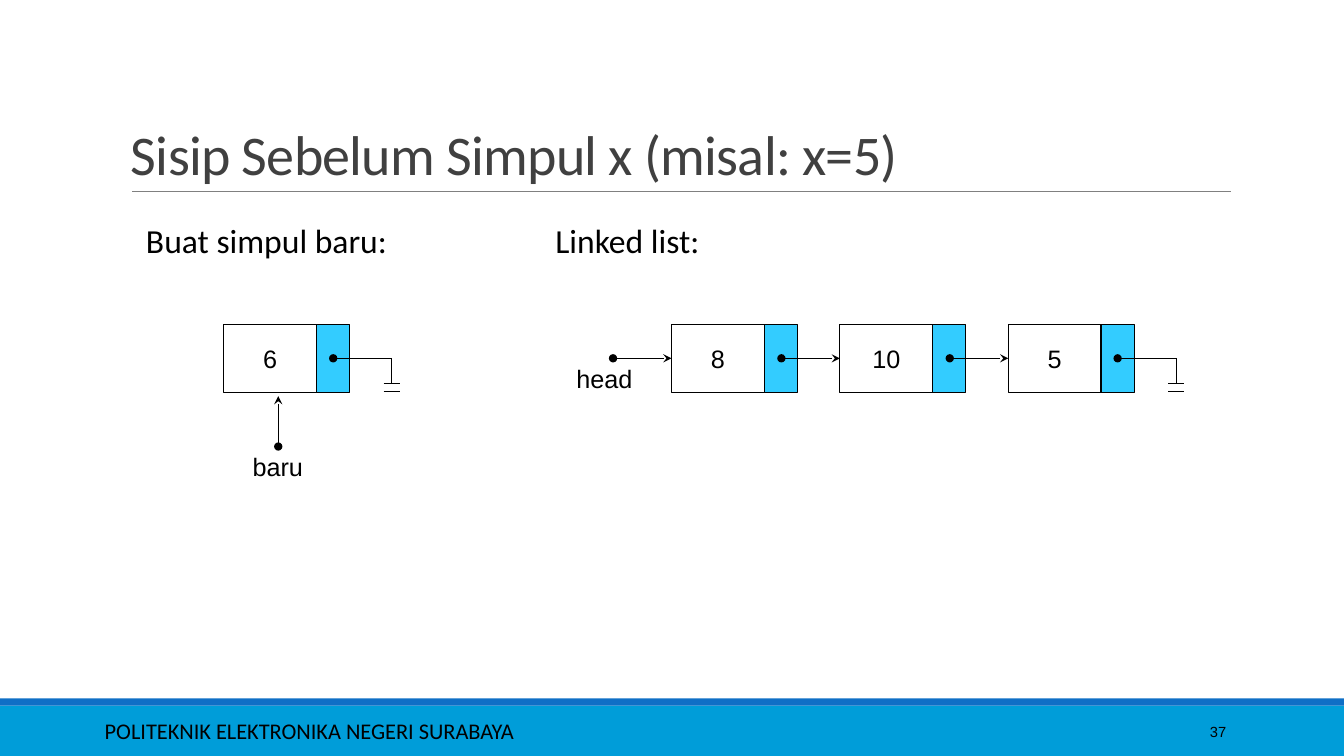
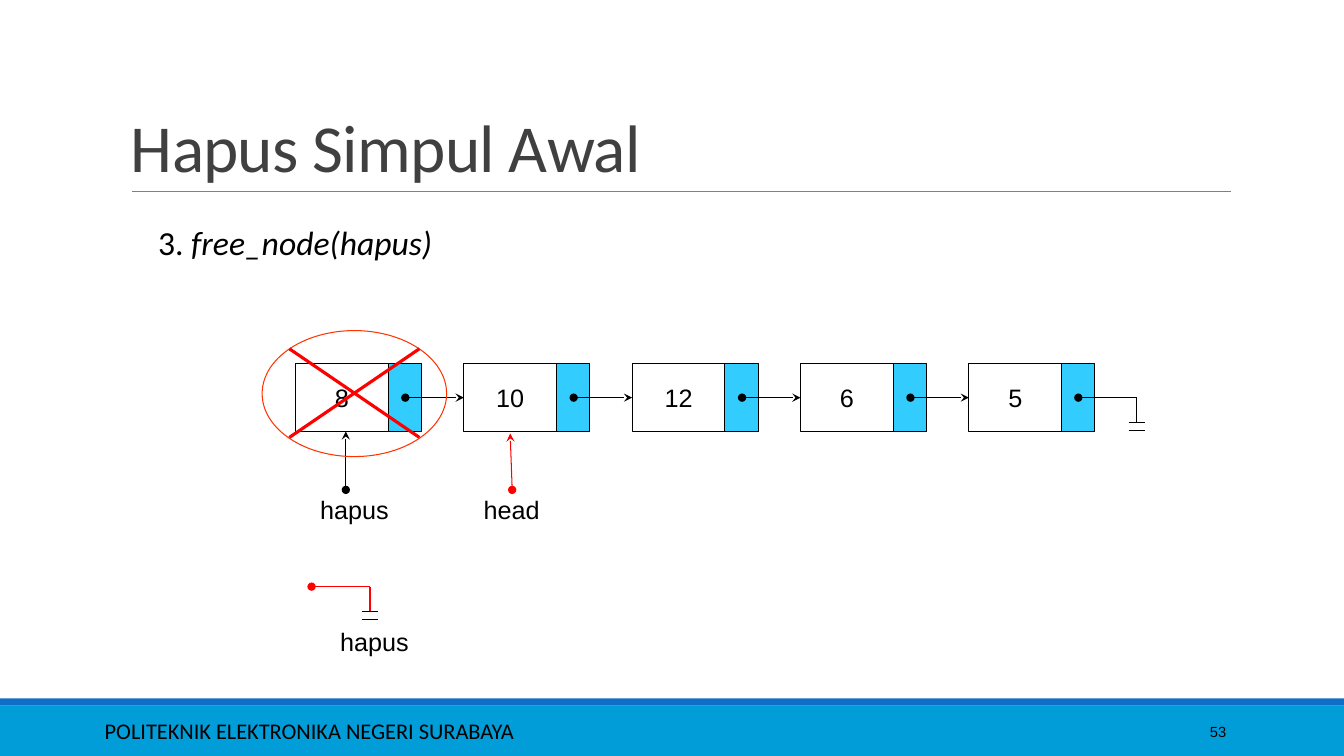
from pptx import Presentation
from pptx.dml.color import RGBColor as RGB
from pptx.enum.shapes import MSO_CONNECTOR as LINK, MSO_SHAPE as SHAPE
from pptx.enum.text import MSO_ANCHOR as ANCHOR, PP_ALIGN as ALIGN
from pptx.oxml.ns import qn
from pptx.util import Inches, Pt
from lxml import etree

HUE = {
    "band": "009DD9", "strip": "0F6FC6", "rule": "808080", "title": "404040",
    "ink": "000000", "cell": "33CCFF", "red": "FF0000", "ring": "FF3300",
}
WIDE, CELL, TALL, STEP = 0.92, 0.33, 0.67, 1.67

DECK = [
    {
        "title": "Sisip Sebelum Simpul x (misal: x=5)", "size": 40, "page": "37",
        "notes": [
            (1.35, 2.13, [("Buat simpul baru:", False)]),
            (5.41, 2.13, [("Linked list:", False)]),
        ],
        "lists": [(2.22, 3.22, ["6"]), (6.66, 3.22, ["8", "10", "5"])],
        "heads": [1],
        "tags": [("baru", 2.17, 4.43), ("head", 5.41, 3.56)],
        "arrows": [((2.76, 4.43), (2.76, 3.93), "ink")],
        "grounds": [],
        "rings": [],
    },
    {
        "title": "Hapus Simpul Awal", "size": 48, "page": "53",
        "notes": [(1.47, 2.15, [("3. ", False), ("free_node(hapus)", True)])],
        "lists": [(2.93, 3.61, ["8", "10", "12", "6", "5"])],
        "heads": [],
        "tags": [("hapus", 2.93, 4.86), ("head", 4.49, 4.86), ("hapus", 3.13, 6.16)],
        "arrows": [
            ((3.43, 4.86), (3.43, 4.28), "ink"),
            ((5.08, 4.86), (5.06, 4.3), "red"),
        ],
        "grounds": [(3.09, 5.82, "red")],
        "rings": [(2.6, 3.28, 1.83, 1.25)],
    },
]


def write(shape, runs, size, font="Arial", hue="ink", align=ALIGN.LEFT, anchor=ANCHOR.TOP):
    frame = shape.text_frame
    frame.word_wrap = True
    frame.vertical_anchor = anchor
    para = frame.paragraphs[0]
    para.alignment = align
    for words, slant in runs:
        run = para.add_run()
        run.text = words
        run.font.name = font
        run.font.size = Pt(size)
        run.font.italic = slant
        run.font.color.rgb = RGB.from_string(HUE[hue])
    return para


def draw(slide, start, end, hue="ink", width=0.75, head=None, tail=None):
    line = slide.shapes.add_connector(LINK.STRAIGHT, *map(Inches, start + end))
    line.line.color.rgb = RGB.from_string(HUE[hue])
    line.line.width = Pt(width)
    props = line._element.spPr
    for tag, kind in (("a:headEnd", head), ("a:tailEnd", tail)):
        if kind:
            etree.SubElement(props.find(qn("a:ln")), qn(tag), type=kind)
    etree.SubElement(props, qn("a:effectLst"))
    return line


prs = Presentation()
prs.slide_width = Inches(13.33)
prs.slide_height = Inches(7.5)

for data in DECK:
    slide = prs.slides.add_slide(prs.slide_layouts[6])
    shapes = slide.shapes

    for top, high, hue in ((7, 0.5, "band"), (6.93, 0.07, "strip")):
        bar = shapes.add_shape(SHAPE.RECTANGLE, 0, Inches(top), prs.slide_width, Inches(high))
        bar.shadow.inherit = False
        bar.fill.solid()
        bar.fill.fore_color.rgb = RGB.from_string(HUE[hue])
        bar.line.fill.background()
    draw(slide, (1.31, 1.9), (12.21, 1.9), "rule", 0.5)
    foot = shapes.add_textbox(Inches(0.94), Inches(7.05), Inches(8.41), Inches(0.4))
    write(foot, [("POLITEKNIK ELEKTRONIKA NEGERI SURABAYA", False)], 16, "Calibri", anchor=ANCHOR.MIDDLE)
    page = shapes.add_textbox(Inches(10.83), Inches(7.06), Inches(1.43), Inches(0.4))
    write(page, [(data["page"], False)], 10.5, align=ALIGN.RIGHT, anchor=ANCHOR.MIDDLE)
    title = shapes.add_textbox(Inches(1.2), Inches(0.31), Inches(11), Inches(1.59))
    para = write(title, [(data["title"], False)], data["size"], "Calibri", "title", anchor=ANCHOR.BOTTOM)
    para.line_spacing = 0.85
    para.runs[0].font._element.set("spc", "-50")

    for left, top, runs in data["notes"]:
        note = shapes.add_textbox(Inches(left), Inches(top), Inches(4), Inches(0.5))
        write(note, runs, 24, "Calibri")

    grounds = list(data["grounds"])
    for spot, (left, top, values) in enumerate(data["lists"]):
        mid = top + TALL / 2
        nodes = []
        for i, value in enumerate(values):
            x = left + i * STEP
            for at, wide in ((x, WIDE), (x + WIDE, CELL)):
                box = shapes.add_shape(SHAPE.RECTANGLE, Inches(at), Inches(top), Inches(wide), Inches(TALL))
                box.shadow.inherit = False
                box.line.color.rgb = RGB.from_string(HUE["ink"])
                box.line.width = Pt(0.75)
                if wide == CELL:
                    box.fill.solid()
                    box.fill.fore_color.rgb = RGB.from_string(HUE["cell"])
                else:
                    box.fill.background()
                    write(box, [(value, False)], 18, align=ALIGN.CENTER, anchor=ANCHOR.MIDDLE)
                    nodes.append(box)
        for i, node in enumerate(nodes):
            if i or spot in data["heads"]:
                x = left + i * STEP
                link = draw(slide, (x - 0.58, mid), (x, mid), head="oval", tail="stealth")
                link.end_connect(node, 1)
        grounds.append((left + (len(values) - 1) * STEP + WIDE + CELL / 2, mid, "ink"))

    for x, y, hue in grounds:
        end = x + 0.58
        draw(slide, (x, y), (end, y), hue, head="oval")
        draw(slide, (end, y), (end, y + 0.25), hue)
        for drop in (0.25, 0.33):
            draw(slide, (end - 0.08, y + drop), (end + 0.08, y + drop))

    for start, end, hue in data["arrows"]:
        draw(slide, start, end, hue, head="oval", tail="stealth")

    for words, left, top in data["tags"]:
        tag = shapes.add_textbox(Inches(left), Inches(top), Inches(1.17), Inches(0.4))
        write(tag, [(words, False)], 18, align=ALIGN.CENTER)

    for left, top, wide, high in data["rings"]:
        ring = shapes.add_shape(SHAPE.OVAL, Inches(left), Inches(top), Inches(wide), Inches(high))
        ring.shadow.inherit = False
        ring.fill.background()
        ring.line.color.rgb = RGB.from_string(HUE["ring"])
        ring.line.width = Pt(0.75)
        near, far = left + 0.27, left + wide - 0.27
        high_y, low_y = top + 0.18, top + high - 0.19
        draw(slide, (near, high_y), (far, low_y), "red", 2.25)
        draw(slide, (far, high_y), (near, low_y), "red", 2.25)

prs.save("out.pptx")
